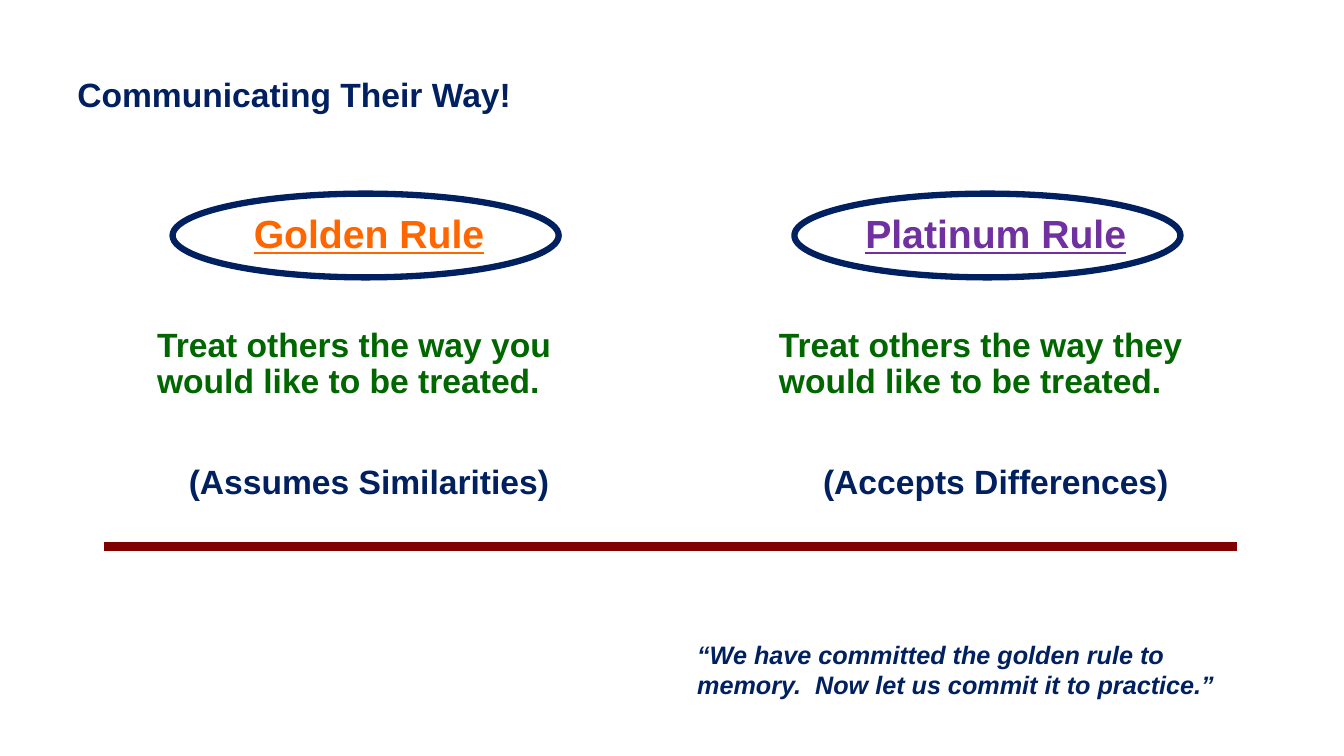
from lxml.etree import SubElement
from pptx import Presentation
from pptx.dml.color import RGBColor
from pptx.enum.shapes import MSO_CONNECTOR, MSO_SHAPE
from pptx.enum.text import MSO_ANCHOR, PP_ALIGN
from pptx.oxml.ns import qn
from pptx.util import Cm, Pt

NAVY, GREEN, MAROON = "002060", "006600", "800000"
TITLE = "Communicating Their Way!"
QUOTE = "“We have committed the golden rule to memory.  Now let us commit it to practice.”"
RULES = [
    (3.71, 11.18, "Golden Rule", "FF6600",
     "Treat others the way you would like to be treated.", "(Assumes Similarities)"),
    (19.38, 11.43, "Platinum Rule", "7030A0",
     "Treat others the way they would like to be treated.", "(Accepts Differences)"),
]


def color(code):
    return RGBColor.from_string(code)


def add_box(slide, left, top, width, height, anchor=MSO_ANCHOR.TOP):
    frame = slide.shapes.add_textbox(Cm(left), Cm(top), Cm(width), Cm(height)).text_frame
    frame.word_wrap = True
    frame.vertical_anchor = anchor
    return frame


def style(para, text, size, code, align=PP_ALIGN.LEFT, before=0, spacing=0.9):
    para.text = text
    para.alignment = align
    para.line_spacing = spacing
    para.space_before = Pt(before)
    font = para.font
    font.name, font.size, font.bold = "Arial", Pt(size), True
    font.color.rgb = color(code)
    return font


def add_oval(slide, left):
    oval = slide.shapes.add_shape(MSO_SHAPE.OVAL, Cm(left), Cm(4.88), Cm(9.73), Cm(2.11))
    oval.shadow.inherit = False
    oval.fill.background()
    oval.line.color.rgb = color(NAVY)
    oval.line.width = Pt(4.5)


def add_rule(slide, left, width, name, code, text, note):
    add_oval(slide, left + 0.64)
    frame = add_box(slide, left, 5.28, width, 10.16)
    head = style(frame.paragraphs[0], name, 28, code, PP_ALIGN.CENTER)
    head.underline = True
    style(frame.add_paragraph(), text, 24, GREEN, before=51)
    style(frame.add_paragraph(), note, 24, NAVY, PP_ALIGN.CENTER, before=46)


def add_bar(slide):
    bar = slide.shapes.add_connector(
        MSO_CONNECTOR.STRAIGHT, Cm(2.62), Cm(13.77), Cm(31.17), Cm(13.77))
    bar.line.color.rgb = color(MAROON)
    bar.line.width = Pt(6)
    SubElement(bar._element.spPr, qn("a:effectLst"))


def main():
    deck = Presentation()
    deck.slide_width, deck.slide_height = Cm(33.87), Cm(19.05)
    slide = deck.slides.add_slide(deck.slide_layouts[6])
    title = add_box(slide, 1.7, 1.47, 30.02, 1.91, MSO_ANCHOR.MIDDLE)
    style(title.paragraphs[0], TITLE, 24, NAVY)
    for rule in RULES:
        add_rule(slide, *rule)
    add_bar(slide)
    quote = add_box(slide, 17.32, 15.98, 13.55, 1.8)
    style(quote.paragraphs[0], QUOTE, 18, NAVY, spacing=1.0).italic = True
    deck.save("out.pptx")


if __name__ == "__main__":
    main()
